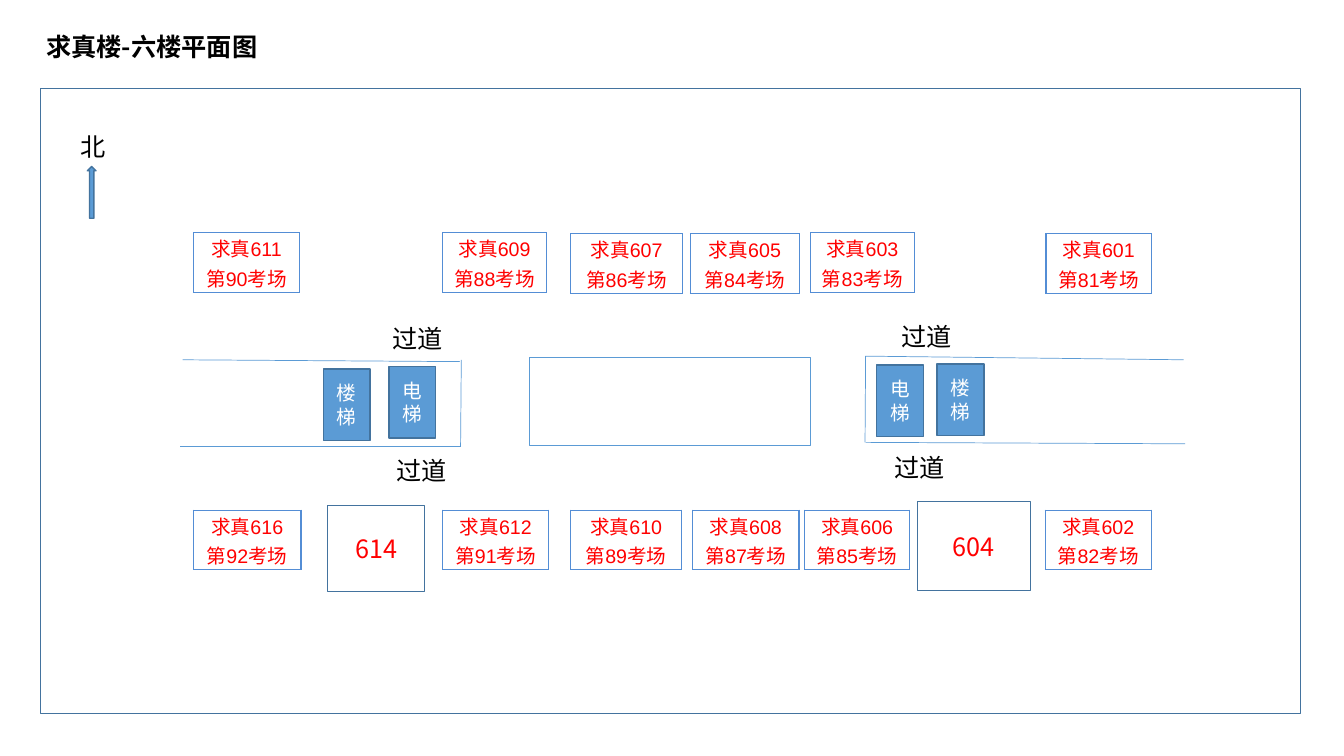
from lxml import etree
from pptx import Presentation
from pptx.dml.color import RGBColor
from pptx.enum.shapes import MSO_CONNECTOR, MSO_SHAPE
from pptx.enum.text import MSO_ANCHOR, MSO_AUTO_SIZE, PP_ALIGN
from pptx.oxml.ns import qn
from pptx.util import Pt

RECT, UP_ARROW = MSO_SHAPE.RECTANGLE, MSO_SHAPE.UP_ARROW
STRAIGHT = MSO_CONNECTOR.STRAIGHT
CENTER = PP_ALIGN.CENTER
MIDDLE, BOTTOM = MSO_ANCHOR.MIDDLE, MSO_ANCHOR.BOTTOM
FIT_SHAPE = MSO_AUTO_SIZE.SHAPE_TO_FIT_TEXT


def rgb(value):
    return RGBColor.from_string(value)


class FloorPlan:
    cjk = "Noto Sans CJK SC"
    latin = "Arial"
    blue = "5B9BD5"
    outline = "43739E"
    border = "538DD5"
    red = "FF0000"
    black = "000000"
    white = "FFFFFF"

    def __init__(self, slide):
        self.s = slide

    def run(self, p, text, size, color, font=None, bold=False):
        r = p.add_run()
        r.text = text
        r.font.size = Pt(size)
        r.font.bold = bold
        r.font.color.rgb = rgb(color)
        r.font.name = font or self.cjk
        ea = etree.SubElement(r.font._element, qn("a:ea"))
        ea.set("typeface", self.cjk)

    def box(self, x, y, w, h, text="", size=18, color=red, fill=None,
            line=outline, width=1, kind=RECT):
        sp = self.s.shapes.add_shape(kind, Pt(x), Pt(y), Pt(w), Pt(h))
        sp.shadow.inherit = False
        if fill:
            sp.fill.solid()
            sp.fill.fore_color.rgb = rgb(fill)
        else:
            sp.fill.background()
        sp.line.color.rgb = rgb(line)
        sp.line.width = Pt(width)
        if text:
            tf = sp.text_frame
            tf.word_wrap = True
            tf.vertical_anchor = MIDDLE
            p = tf.paragraphs[0]
            p.alignment = CENTER
            self.run(p, text, size, color)

    def label(self, x, y, w, text, bold=False):
        sp = self.s.shapes.add_textbox(Pt(x), Pt(y), Pt(w), Pt(29))
        tf = sp.text_frame
        tf.word_wrap = True
        tf.auto_size = FIT_SHAPE
        self.run(tf.paragraphs[0], text, 18, self.black, bold=bold)

    def wall(self, x1, y1, x2, y2):
        c = self.s.shapes.add_connector(STRAIGHT, Pt(x1), Pt(y1), Pt(x2), Pt(y2))
        c.line.color.rgb = rgb(self.blue)
        c.line.width = Pt(0.5)
        etree.SubElement(c._element.spPr, qn("a:effectLst"))

    def cell_border(self, cell, sides):
        tcPr = cell._tc.get_or_add_tcPr()
        for side in "LRTB":
            ln = etree.SubElement(tcPr, qn(f"a:ln{side}"), w=str(Pt(1)))
            if side in sides:
                fill = etree.SubElement(ln, qn("a:solidFill"))
                etree.SubElement(fill, qn("a:srgbClr"), val=self.border)
            else:
                etree.SubElement(ln, qn("a:noFill"))

    def exam_room(self, x, y, w, room, number):
        h = 42.5
        frame = self.s.shapes.add_table(2, 1, Pt(x), Pt(y), Pt(w), Pt(h))
        table = frame.table
        table.first_row = table.horz_banding = False
        rows = ((f"求真{room}", "LRT"), (f"第{number}考场", "LRB"))
        for i, (text, sides) in enumerate(rows):
            table.rows[i].height = Pt(h / 2)
            cell = table.cell(i, 0)
            cell.margin_left = cell.margin_right = cell.margin_top = Pt(0.75)
            cell.margin_bottom = Pt(3.6)
            cell.vertical_anchor = BOTTOM
            self.cell_border(cell, sides)
            cell.fill.background()
            p = cell.text_frame.paragraphs[0]
            p.alignment = CENTER
            self.run(p, text, 14, self.red, self.latin)


def main():
    prs = Presentation()
    prs.slide_width, prs.slide_height = Pt(960), Pt(540)
    plan = FloorPlan(prs.slides.add_slide(prs.slide_layouts[6]))

    plan.box(28.8, 63.2, 900, 446.4)
    plan.label(26, 18.7, 169.2, "求真楼-六楼平面图", bold=True)

    plan.box(655.2, 358.4, 81, 63.4, "604")
    plan.box(234, 361.2, 69.3, 61.5, "614")
    plan.box(378.4, 255.2, 200.6, 63, line=plan.blue, width=0.5)

    for wall in (
        (128.8, 318.8, 329, 318.8), (130.4, 257, 328.5, 258.3),
        (329.5, 257, 329, 318.5), (618.3, 316, 846.5, 317),
        (617.9, 254.4, 845.5, 257), (618.3, 254.4, 617.9, 316),
    ):
        plan.wall(*wall)

    for x, y in ((273, 227.5), (636.7, 226.3), (276, 321.4), (631.9, 319.3)):
        plan.label(x, y, 51, "过道")

    for x, y, text in (
        (277.8, 261.8, "电梯"), (669.4, 260, "楼梯"),
        (626.2, 260.8, "电梯"), (231, 263.5, "楼梯"),
    ):
        plan.box(x, y, 33.4, 51.2, text, 14, plan.white, plan.blue)

    plan.box(62.4, 118.9, 6.2, 37, fill=plan.blue, kind=UP_ARROW)
    plan.label(50.4, 90, 49, "北")

    for x, y, w, room, number in (
        (747.2, 167, 75.2, 601, 81), (746.6, 364.4, 75.8, 602, 82),
        (579, 166.3, 74, 603, 83), (493.2, 167, 77.8, 605, 84),
        (574.6, 364.4, 75.2, 606, 85), (407.6, 167, 79.8, 607, 86),
        (494.8, 364.4, 76, 608, 87), (316.2, 166.3, 74, 609, 88),
        (407.6, 364.4, 79.2, 610, 89), (138.2, 166.3, 75.8, 611, 90),
        (316.2, 364.4, 75.8, 612, 91), (138.2, 364.4, 76.8, 616, 92),
    ):
        plan.exam_room(x, y, w, room, number)

    prs.save("out.pptx")


if __name__ == "__main__":
    main()
